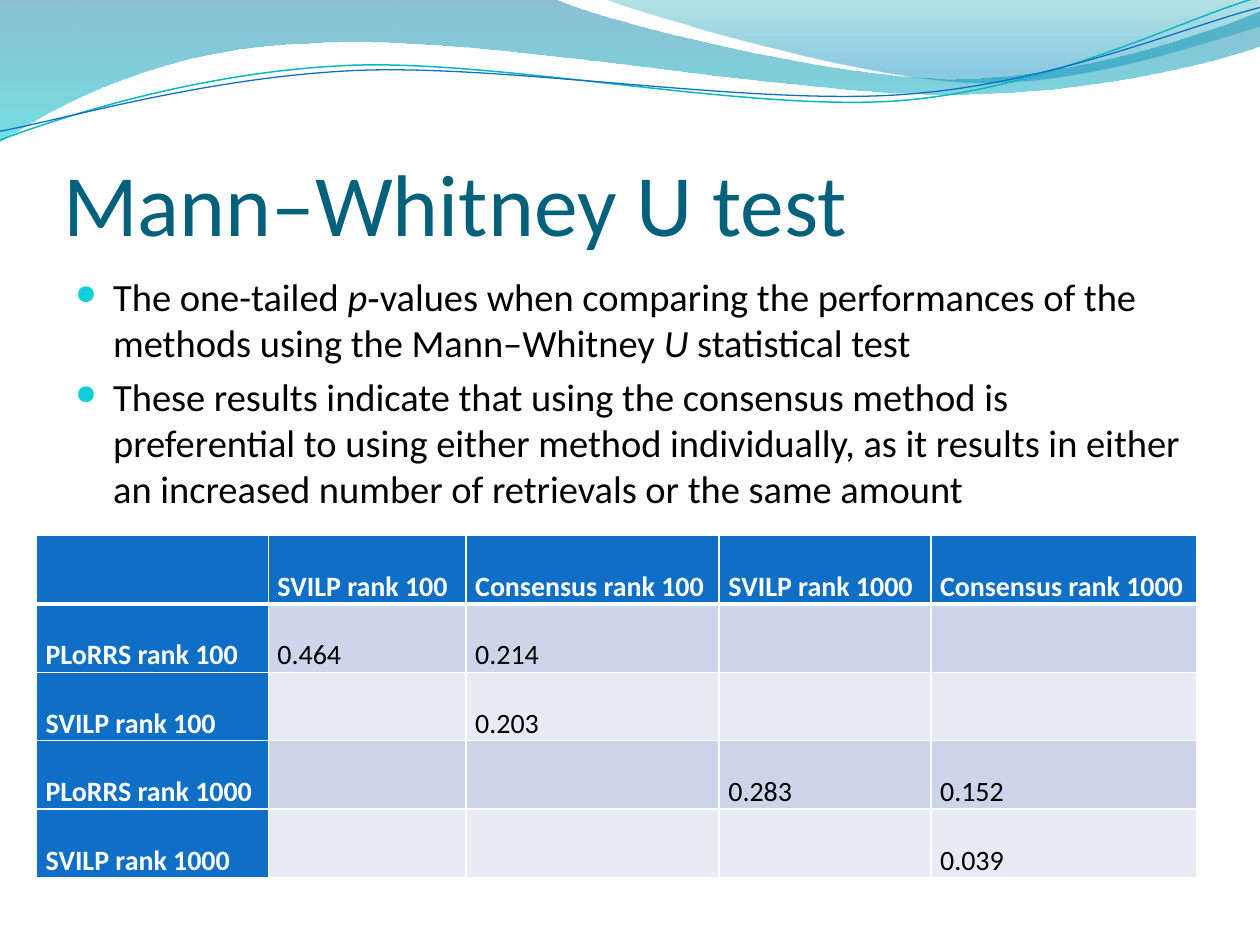
"""Build the Mann–Whitney U test slide with its wave header and p-value table."""
from lxml import etree
from pptx import Presentation
from pptx.dml.color import RGBColor
from pptx.enum.text import MSO_ANCHOR, PP_ALIGN
from pptx.oxml.ns import qn
from pptx.util import Pt

BOTTOM = MSO_ANCHOR.BOTTOM
LEFT, JUSTIFY = PP_ALIGN.LEFT, PP_ALIGN.JUSTIFY
FONT = "Calibri"
COLORS = {
    "title": "04617B", "text": "000000", "white": "FFFFFF", "bullet": "0BD0D9",
    "header": "0F6FC6", "band_dark": "CCD5EA", "band_light": "E7EBF5",
    "teal_line": "0AB8BF", "blue_line": "0F6FC6",
    "wave_top": "0074A1", "wave_bottom": "00C6CF",
    "crest_top": "00A1A9", "crest_bottom": "008BBF",
}


def color(name):
    """Return the named colour."""
    return RGBColor.from_string(COLORS[name])


def draw_outline(shapes, start, segments, closed):
    """Draw lines (x, y) and cubic curves (two handles and an end) in points."""
    builder = shapes.build_freeform(Pt(start[0]), Pt(start[1]))
    vertices = [(Pt(x), Pt(y)) for segment in segments
                for x, y in zip(segment[::2], segment[1::2])]
    builder.add_line_segments(vertices, close=closed)
    outline = builder.convert_to_shape()
    outline.shadow.inherit = False
    steps = iter(list(outline.element.iter(qn("a:lnTo"))))
    for segment in segments:
        step = next(steps)
        if len(segment) == 6:
            step.tag = qn("a:cubicBezTo")
            for _ in range(2):
                handle = next(steps)
                step.append(handle[0])
                handle.getparent().remove(handle)
    return outline


prs = Presentation()
prs.slide_width, prs.slide_height = Pt(720), Pt(540)
slide = prs.slides.add_slide(prs.slide_layouts[5])
shapes = slide.shapes

waves = [
    ((0, 0), [(317, -0.7), (343, 12, 478, 45, 546, 45), (614, 45, 690, 19, 720, 6.5),
              (721, 26), (708, 32, 626, 55, 537, 54), (448, 54, 275, 20, 185, 24.5),
              (93, 26, 33, 60, -0.7, 81.4)],
     [("wave_top", 0, 45), ("wave_bottom", 1, 55)]),
    ((345, -0.7), [(366.5, 8, 491, 44.6, 553.7, 46.8),
                   (616, 49.7, 692, 23, 720, 15), (720, 0)],
     [("crest_top", 0, 30), ("crest_bottom", 0.8, 45)]),
]
for start, segments, stops in waves:
    wave = draw_outline(shapes, start, segments, True)
    wave.line.fill.background()
    wave.fill.gradient()
    wave.fill.gradient_angle = 270
    for stop, (name, position, _) in zip(wave.fill.gradient_stops, stops):
        stop.color.rgb = color(name)
        stop.position = position
    for tint, (_, _, opacity) in zip(wave.element.spPr.iter(qn("a:srgbClr")), stops):
        etree.SubElement(tint, qn("a:alpha"), val=str(opacity * 1000))

swooshes = [
    ((0, 80), [(34.6, 67, 113.8, 41, 199.4, 37.4), (284.4, 33.8, 427, 64, 513.4, 57.6),
               (599.8, 51, 675.4, 10.8, 718.6, -1.4)], "teal_line", 0.85),
    ((0, 75), [(33.8, 69, 118, 44, 203.8, 40.3), (290, 36.7, 429.8, 60.5, 516.2, 54),
               (602, 48, 677.5, 15, 720, 4.3)], "blue_line", 0.75),
]
for start, segments, name, width in swooshes:
    swoosh = draw_outline(shapes, start, segments, False)
    swoosh.fill.background()
    swoosh.line.color.rgb = color(name)
    swoosh.line.width = Pt(width)

title = shapes.title
title.element.getparent().append(title.element)
title.left, title.top, title.width, title.height = Pt(36), Pt(55.2), Pt(648), Pt(90)
title_frame = title.text_frame
title_frame.text = "Mann–Whitney U test"
title_frame.vertical_anchor = BOTTOM
title_frame.margin_left = title_frame.margin_right = title_frame.margin_bottom = 0
title_frame.margin_top = Pt(3.6)
heading = title_frame.paragraphs[0]
heading.alignment = LEFT
heading.runs[0].font.name, heading.runs[0].font.size = FONT, Pt(50)
heading.runs[0].font.color.rgb = color("title")

findings = [
    [("The one-tailed ", False), ("p", True),
     ("‑values when comparing the performances of the methods using the Mann–Whitney ", False),
     ("U", True), (" statistical test", False)],
    [("These results indicate that using the consensus method is preferential to using "
      "either method individually, as it results in either an increased number of "
      "retrievals or the same amount", False)],
]
body = shapes.add_textbox(Pt(36), Pt(152.6), Pt(648), Pt(345.6)).text_frame
body.word_wrap = True
for index, finding in enumerate(findings):
    paragraph = body.add_paragraph() if index else body.paragraphs[0]
    properties = paragraph._p.get_or_add_pPr()
    properties.set("marL", str(Pt(21.6)))
    properties.set("indent", str(-Pt(21.6)))
    bullet_color = etree.SubElement(properties, qn("a:buClr"))
    etree.SubElement(bullet_color, qn("a:srgbClr"), val=COLORS["bullet"])
    etree.SubElement(properties, qn("a:buSzPct"), val="70000")
    etree.SubElement(properties, qn("a:buChar"), char="●")
    if index:
        paragraph.space_before = Pt(4.2)
    for words, italic in finding:
        run = paragraph.add_run()
        run.text = words
        run.font.name, run.font.size, run.font.italic = FONT, Pt(22), italic
        run.font.color.rgb = color("text")

p_values = [
    ["", "SVILP rank 100", "Consensus rank 100", "SVILP rank 1000", "Consensus rank 1000"],
    ["PLoRRS rank 100", "0.464", "0.214", "", ""],
    ["SVILP rank 100", "", "0.203", "", ""],
    ["PLoRRS rank 1000", "", "", "0.283", "0.152"],
    ["SVILP rank 1000", "", "", "", "0.039"],
]
column_widths = [132.5, 113, 144.7, 121, 151.7]
row_height = 39.1
table = shapes.add_table(len(p_values), len(column_widths), Pt(20.8), Pt(306),
                         Pt(sum(column_widths)), Pt(row_height * len(p_values))).table
for column, width in zip(table.columns, column_widths):
    column.width = Pt(width)
for r, row in enumerate(p_values):
    table.rows[r].height = Pt(row_height)
    for c, entry in enumerate(row):
        cell = table.cell(r, c)
        is_label = r == 0 or c == 0
        border_widths = {"L": 1, "R": 1, "T": 3 if r == 1 else 1, "B": 3 if r == 0 else 1}
        for side, width in border_widths.items():
            border = etree.SubElement(cell._tc.get_or_add_tcPr(), qn(f"a:ln{side}"),
                                      w=str(Pt(width)))
            border_fill = etree.SubElement(border, qn("a:solidFill"))
            etree.SubElement(border_fill, qn("a:srgbClr"), val=COLORS["white"])
        cell.fill.solid()
        band = "band_dark" if r % 2 else "band_light"
        cell.fill.fore_color.rgb = color("header" if is_label else band)
        cell.margin_left = cell.margin_right = Pt(5.3)
        cell.margin_top = cell.margin_bottom = 0
        if entry:
            cell.text_frame.text = entry
            paragraph = cell.text_frame.paragraphs[0]
            paragraph.alignment = JUSTIFY
            paragraph.line_spacing = 2.0
            font = paragraph.runs[0].font
            font.name, font.size, font.bold = FONT, Pt(16), is_label
            font.color.rgb = color("white" if is_label else "text")

prs.save("out.pptx")
